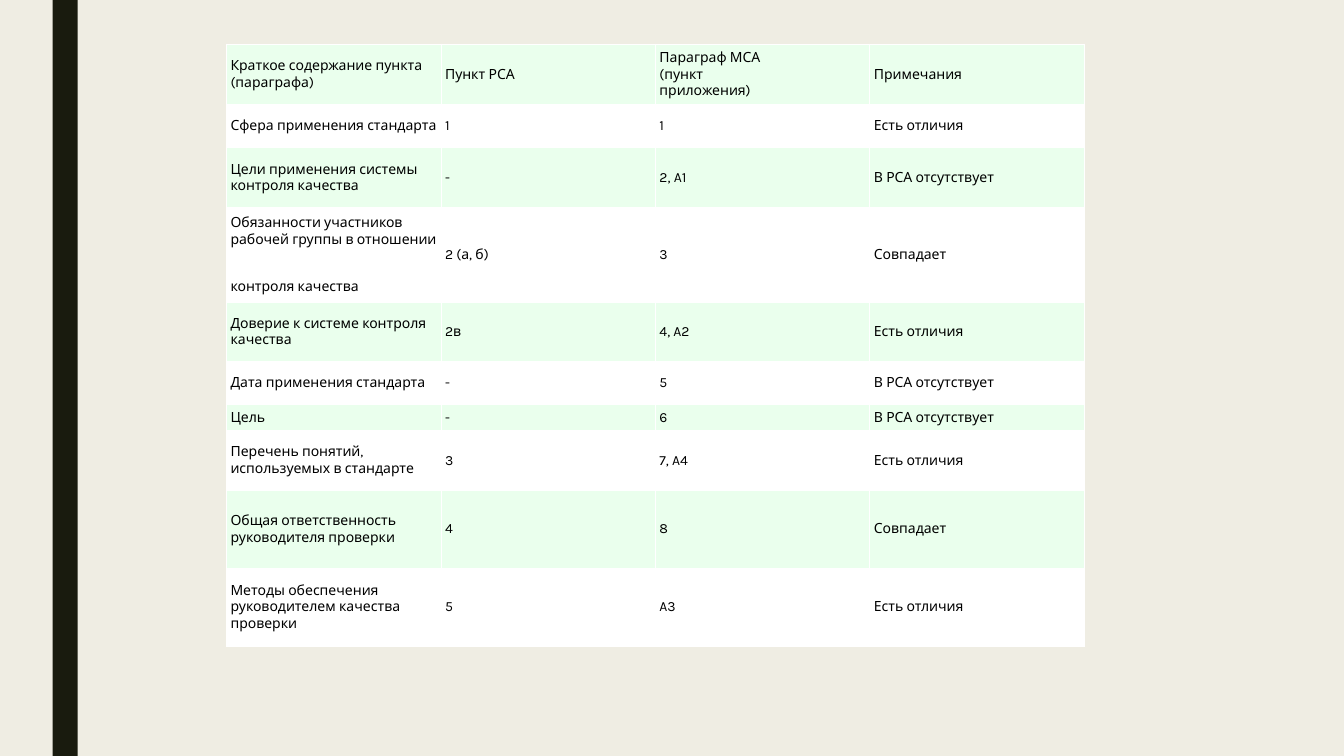
"""Build a slide with a table comparing audit standard clauses."""
from lxml.etree import SubElement
from pptx import Presentation
from pptx.dml.color import RGBColor
from pptx.enum.shapes import MSO_SHAPE
from pptx.enum.text import MSO_ANCHOR
from pptx.oxml.ns import qn
from pptx.util import Pt

ROWS = [
    (43.3, "Краткое содержание пункта \n(параграфа)", "Пункт РСА",
     "Параграф МСА\n(пункт \nприложения)", "Примечания"),
    (30.7, "Сфера применения стандарта", "1", "1", "Есть отличия"),
    (42.9, "Цели применения системы \nконтроля качества", "-", "2, A1", "В РСА отсутствует"),
    (67.6, "Обязанности участников \nрабочей группы в отношении \nконтроля качества",
     "2 (а, б)", "3", "Совпадает"),
    (42.5, "Доверие к системе контроля \nкачества", "2в", "4, A2", "Есть отличия"),
    (30.7, "Дата применения стандарта", "-", "5", "В РСА отсутствует"),
    (18.3, "Цель", "-", "6", "В РСА отсутствует"),
    (42.9, "Перечень понятий, \nиспользуемых в стандарте", "3", "7, A4", "Есть отличия"),
    (55.6, "Общая ответственность \nруководителя проверки", "4", "8", "Совпадает"),
    (55.6, "Методы обеспечения \nруководителем качества \nпроверки", "5", "A3", "Есть отличия"),
]
FONT = "Karla"
BACKGROUND = RGBColor(0xEF, 0xED, 0xE3)
DARK = RGBColor(0x19, 0x1B, 0x0E)
MINT = RGBColor(0xEA, 0xFF, 0xED)
WHITE = RGBColor(0xFF, 0xFF, 0xFF)
BLACK = RGBColor(0, 0, 0)
SLIDE_WIDTH, SLIDE_HEIGHT = 960, 540
TABLE_LEFT, TABLE_TOP = 161.8, 31.5
COLUMN_WIDTH = 153.2
CELL_MARGIN = 2.9
BORDER_WIDTH = 0.75


def add_borders(cell):
    properties = cell._tc.get_or_add_tcPr()
    for side in ("a:lnL", "a:lnR", "a:lnT", "a:lnB"):
        line = SubElement(properties, qn(side), w=str(Pt(BORDER_WIDTH)))
        fill = SubElement(line, qn("a:solidFill"))
        SubElement(fill, qn("a:srgbClr"), val=str(WHITE))


def write_cell(cell, text, color):
    add_borders(cell)
    cell.fill.solid()
    cell.fill.fore_color.rgb = color
    cell.vertical_anchor = MSO_ANCHOR.MIDDLE
    cell.margin_left = cell.margin_right = Pt(CELL_MARGIN)
    cell.margin_top = cell.margin_bottom = Pt(CELL_MARGIN)
    paragraph = cell.text_frame.paragraphs[0]
    for index, line in enumerate(text.split("\n")):
        if index:
            paragraph.add_line_break()
        run = paragraph.add_run()
        run.text = line
        run.font.name = FONT
        run.font.size = Pt(10)
        run.font.bold = False
        run.font.color.rgb = BLACK


def add_stripe(slide):
    stripe = slide.shapes.add_shape(
        MSO_SHAPE.RECTANGLE, Pt(37.5), Pt(0), Pt(18), Pt(SLIDE_HEIGHT))
    stripe.shadow.inherit = False
    stripe.fill.solid()
    stripe.fill.fore_color.rgb = DARK
    stripe.line.fill.background()


def add_comparison_table(slide):
    column_count = len(ROWS[0]) - 1
    table = slide.shapes.add_table(
        len(ROWS), column_count, Pt(TABLE_LEFT), Pt(TABLE_TOP),
        Pt(COLUMN_WIDTH * column_count), Pt(sum(row[0] for row in ROWS))).table
    table.first_row = False
    table.horz_banding = False
    for column in table.columns:
        column.width = Pt(COLUMN_WIDTH)
    for row_index, (height, *texts) in enumerate(ROWS):
        table.rows[row_index].height = Pt(height)
        color = WHITE if row_index % 2 else MINT
        for column_index, text in enumerate(texts):
            write_cell(table.cell(row_index, column_index), text, color)


def main():
    presentation = Presentation()
    presentation.slide_width = Pt(SLIDE_WIDTH)
    presentation.slide_height = Pt(SLIDE_HEIGHT)
    slide = presentation.slides.add_slide(presentation.slide_layouts[6])
    slide.background.fill.solid()
    slide.background.fill.fore_color.rgb = BACKGROUND
    add_stripe(slide)
    add_comparison_table(slide)
    presentation.save("out.pptx")


if __name__ == "__main__":
    main()
